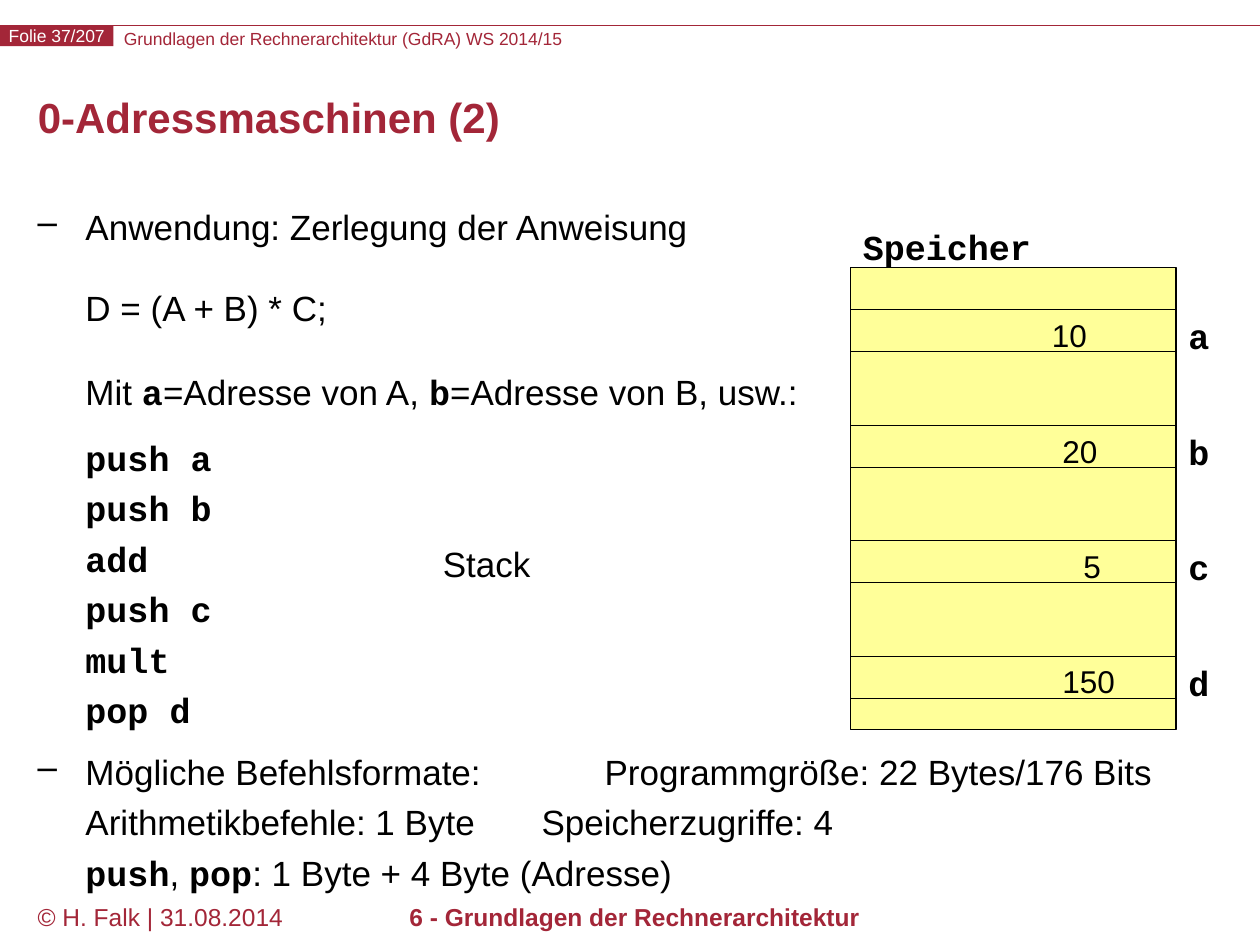
"""Build the lecture slide on zero-address machines."""
import pptx
import pptx.dml.color
import pptx.enum.shapes
import pptx.enum.text
import pptx.oxml
import pptx.oxml.ns
import pptx.util

RED, BLACK, WHITE, YELLOW = "A32638", "000000", "FFFFFF", "FFFF99"
SANS, MONO = "Arial", "Courier New"
ALIGN = pptx.enum.text.PP_ALIGN
ANCHOR = pptx.enum.text.MSO_ANCHOR


def colour(value):
    return pptx.dml.color.RGBColor.from_string(value)


def grid(cells):
    return pptx.util.Inches(cells / 12)


class SlideBuilder:
    def __init__(self, presentation):
        self.slide = presentation.slides.add_slide(presentation.slide_layouts[5])

    def style(self, run, size, font=SANS, ink=BLACK, bold=False):
        run.font.size = pptx.util.Pt(size)
        run.font.name = font
        run.font.bold = bold
        run.font.color.rgb = colour(ink)

    def fill_text(self, shape, text, size, align=ALIGN.LEFT, anchor=ANCHOR.TOP,
                  wrap=True, inset=True, **look):
        frame = shape.text_frame
        frame.text = text
        frame.word_wrap = wrap
        frame.vertical_anchor = anchor
        if not inset:
            frame.margin_left = frame.margin_right = 0
            frame.margin_top = frame.margin_bottom = 0
        paragraph = frame.paragraphs[0]
        paragraph.alignment = align
        for run in paragraph.runs:
            self.style(run, size, **look)
        return paragraph

    def title(self, text, left, top, width, height):
        shape = self.slide.shapes.title
        shape.left, shape.top = grid(left), grid(top)
        shape.width, shape.height = grid(width), grid(height)
        paragraph = self.fill_text(shape, text, 24, anchor=ANCHOR.MIDDLE, ink=RED, bold=True)
        paragraph.line_spacing = pptx.util.Pt(24)

    def text(self, text, left, top, width, height, size, **look):
        shape = self.slide.shapes.add_textbox(grid(left), grid(top), grid(width), grid(height))
        self.fill_text(shape, text, size, **look)
        return shape

    def box(self, left, top, width, height, fill, line=None):
        shape = self.slide.shapes.add_shape(
            pptx.enum.shapes.MSO_SHAPE.RECTANGLE,
            grid(left), grid(top), grid(width), grid(height))
        shape.shadow.inherit = False
        shape.fill.solid()
        shape.fill.fore_color.rgb = colour(fill)
        if line:
            shape.line.color.rgb = colour(line)
            shape.line.width = pptx.util.Pt(0.75)
        else:
            shape.line.fill.background()
        return shape

    def rule(self, left, top, width, ink):
        line = self.slide.shapes.add_connector(
            pptx.enum.shapes.MSO_CONNECTOR.STRAIGHT,
            grid(left), grid(top), grid(left + width), grid(top))
        line.line.color.rgb = colour(ink)
        line.line.width = pptx.util.Pt(0.75)
        properties = line.element.find(pptx.oxml.ns.qn("p:spPr"))
        properties.append(pptx.oxml.parse_xml(
            f'<a:effectLst {pptx.oxml.ns.nsdecls("a")}/>'))

    def body(self, items, left, top, width, height):
        """Add paragraphs of (dash, space before, text), with code between bars."""
        frame = self.text("", left, top, width, height, 20).text_frame
        for index, (dash, before, text) in enumerate(items):
            paragraph = frame.add_paragraph() if index else frame.paragraphs[0]
            paragraph.line_spacing = pptx.util.Pt(28.8)
            paragraph.space_before = pptx.util.Pt(before)
            properties = paragraph._p.get_or_add_pPr()
            properties.set("marL", str(pptx.util.Inches(0.38)))
            properties.set("indent", str(pptx.util.Inches(-0.38 if dash else 0)))
            bullet = 'buChar char="–"' if dash else "buNone"
            properties.append(pptx.oxml.parse_xml(
                f'<a:{bullet} {pptx.oxml.ns.nsdecls("a")}/>'))
            for part, segment in enumerate(text.split("|")):
                is_code = part % 2 == 1
                for number, line in enumerate(segment.split("\n")):
                    if number:
                        paragraph.add_line_break()
                    if line:
                        run = paragraph.add_run()
                        run.text = line
                        self.style(run, 20, font=MONO if is_code else SANS, bold=is_code)


def add_frame(builder):
    builder.rule(0, 2.4, 120, RED)
    builder.text("Grundlagen der Rechnerarchitektur (GdRA) WS 2014/15",
                 11.8, 2.64, 79, 2, 10, ink=RED, inset=False)
    number = builder.box(0, 2.4, 10.8, 2, RED)
    builder.fill_text(number, "Folie 37/207", 10, align=ALIGN.CENTER,
                      anchor=ANCHOR.MIDDLE, wrap=False, inset=False, ink=WHITE)
    builder.text("© H. Falk | 31.08.2014", 2.4, 85.3, 26.4, 4.7, 14, ink=RED)
    builder.text("6 - Grundlagen der Rechnerarchitektur", 24.1, 85.3, 72.7, 4.7, 14,
                 align=ALIGN.CENTER, ink=RED, bold=True)


def add_memory(builder):
    left, width, first_row, pitch, row_height = 81, 31, 29.5, 11, 4
    builder.box(left, 25.5, width, 44, YELLOW, BLACK)
    cells = [("a", "10", 99, 9), ("b", "20", 100, 9), ("c", "5", 102, 7), ("d", "150", 100, 11)]
    for index, (address, value, value_left, value_width) in enumerate(cells):
        top = first_row + index * pitch
        builder.rule(left, top, width, BLACK)
        builder.rule(left, top + row_height, width, BLACK)
        builder.text(value, value_left, top, value_width, 4.8, 18, anchor=ANCHOR.MIDDLE)
        builder.text(address, left + width, top - 0.1, 4.4, 5.3, 20,
                     wrap=False, font=MONO, bold=True)
    builder.text("Speicher", left, 20.9, 35, 5.3, 20, font=MONO, bold=True)


def main():
    presentation = pptx.Presentation()
    presentation.slide_width = grid(120)
    presentation.slide_height = grid(90)
    builder = SlideBuilder(presentation)
    add_frame(builder)
    builder.title("0-Adressmaschinen (2)", 2.4, 7.2, 115.3, 8.6)
    builder.body([
        (True, 0, "Anwendung: Zerlegung der Anweisung"),
        (False, 17.5, "D = (A + B) * C;"),
        (False, 19, "Mit |a|=Adresse von A, |b|=Adresse von B, usw.:"),
        (False, 9, "|push a\npush b\nadd\npush c\nmult\npop d|"),
        (True, 6.5, "Mögliche Befehlsformate:\t\tProgrammgröße: 22 Bytes/176 Bits\n"
                    "Arithmetikbefehle: 1 Byte\t\tSpeicherzugriffe: 4\n"
                    "|push|, |pop|: 1 Byte + 4 Byte (Adresse)"),
    ], 2.4, 18.2, 115.3, 65.5)
    add_memory(builder)
    builder.text("Stack", 41, 51.1, 36, 5.3, 20)
    presentation.save("out.pptx")


if __name__ == "__main__":
    main()
